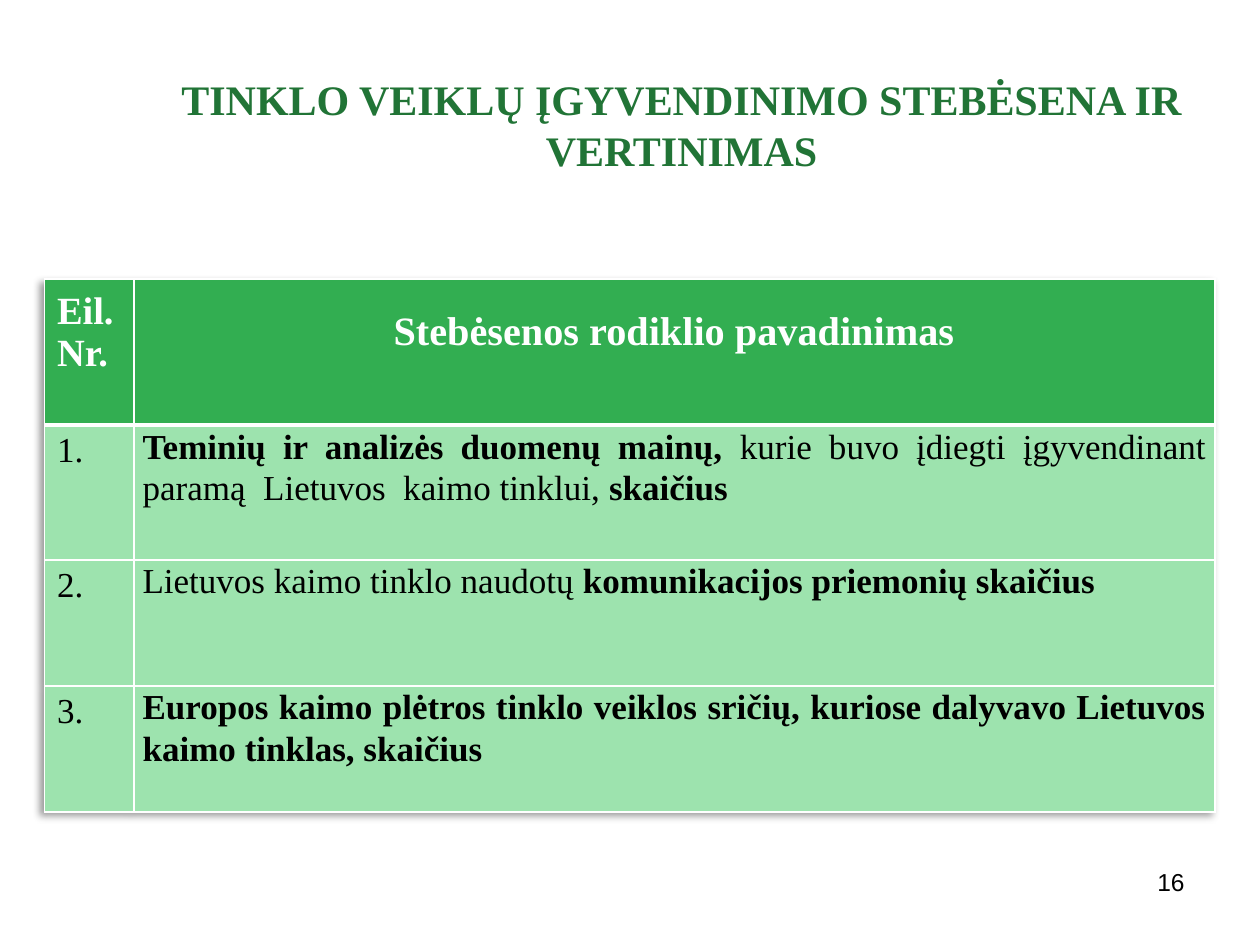
from lxml import etree
from pptx import Presentation
from pptx.dml.color import RGBColor
from pptx.enum.text import MSO_ANCHOR, PP_ALIGN
from pptx.oxml.ns import qn
from pptx.util import Pt

LEFT, MID, RIGHT, JUST = PP_ALIGN.LEFT, PP_ALIGN.CENTER, PP_ALIGN.RIGHT, PP_ALIGN.JUSTIFY
TOP, CENTER = MSO_ANCHOR.TOP, MSO_ANCHOR.MIDDLE
SERIF, SANS = "Times New Roman", "Arial"
HUES = {"title": "217436", "head": "32AE51", "row": "9DE3AE",
        "white": "FFFFFF", "black": "000000"}

TITLE = "TINKLO VEIKLŲ ĮGYVENDINIMO STEBĖSENA IR VERTINIMAS"
HEADS = [("Eil. Nr.", 22, LEFT), ("Stebėsenos rodiklio pavadinimas", 23, MID)]
ROWS = [
    [("Teminių ir analizės duomenų mainų, ", True),
     ("kurie buvo įdiegti įgyvendinant paramą  Lietuvos  kaimo tinklui, ", False),
     ("skaičius", True)],
    [("Lietuvos kaimo tinklo naudotų ", False),
     ("komunikacijos priemonių skaičius", True)],
    [("Europos kaimo plėtros tinklo veiklos sričių, kuriose dalyvavo "
      "Lietuvos kaimo tinklas, skaičius", True)],
]
PAGE = "16"
WIDTHS = [51.1, 617.8]
HEIGHTS = [83.5, 77, 72, 72]


def write(frame, text, size=20, color="black", font=SERIF, bold=False,
          align=LEFT, space=None):
    frame.word_wrap = True
    para = frame.paragraphs[0]
    para.alignment = align
    if space:
        para.line_spacing = space
    runs = [(text, bold)] if isinstance(text, str) else text
    for words, heavy in runs:
        run = para.add_run()
        run.text = words
        run.font.size = Pt(size)
        run.font.name = font
        run.font.bold = heavy
        run.font.color.rgb = RGBColor.from_string(HUES[color])


def add_box(slide, area, text, anchor=TOP, **style):
    frame = slide.shapes.add_textbox(*map(Pt, area)).text_frame
    frame.vertical_anchor = anchor
    write(frame, text, **style)


def add_hue(node, color):
    return etree.SubElement(node, qn("a:srgbClr"), val=HUES[color])


def paint(cell, color, base):
    props = cell._tc.get_or_add_tcPr()
    for side, width in zip("LRTB", (1, 1, 1, base)):
        line = etree.SubElement(props, qn("a:ln" + side), w=str(Pt(width)))
        add_hue(etree.SubElement(line, qn("a:solidFill")), "white")
    cell.fill.solid()
    cell.fill.fore_color.rgb = RGBColor.from_string(HUES[color])


def add_shade(table):
    effects = etree.Element(qn("a:effectLst"))
    shade = etree.SubElement(effects, qn("a:outerShdw"), blurRad=str(Pt(4)),
                             dist=str(Pt(3)), dir="8100000", rotWithShape="0")
    etree.SubElement(add_hue(shade, "black"), qn("a:alpha"), val="40000")
    table._tbl.tblPr.insert(0, effects)


def add_grid(slide):
    table = slide.shapes.add_table(len(HEIGHTS), len(WIDTHS), Pt(25.4), Pt(159.4),
                                   Pt(sum(WIDTHS)), Pt(sum(HEIGHTS))).table
    add_shade(table)
    for col, width in zip(table.columns, WIDTHS):
        col.width = Pt(width)
    for row, height in zip(table.rows, HEIGHTS):
        row.height = Pt(height)
    for col, (text, size, align) in enumerate(HEADS):
        cell = table.cell(0, col)
        paint(cell, "head", 3)
        cell.vertical_anchor = CENTER
        cell.margin_bottom = Pt(26)
        write(cell.text_frame, text, size=size, color="white", bold=True, align=align)
    for row, runs in enumerate(ROWS, 1):
        mark, body = table.cell(row, 0), table.cell(row, 1)
        paint(mark, "row", 1)
        paint(body, "row", 1)
        write(mark.text_frame, f"{row}.")
        body.margin_left = body.margin_right = Pt(5)
        body.margin_top = body.margin_bottom = 0
        write(body.text_frame, runs, align=JUST, space=1.07)


def main():
    deck = Presentation()
    deck.slide_width, deck.slide_height = Pt(720), Pt(540)
    slide = deck.slides.add_slide(deck.slide_layouts[6])
    add_box(slide, (65.5, 26, 648, 90), TITLE, anchor=CENTER, size=24,
            color="title", bold=True, align=MID)
    add_grid(slide)
    add_box(slide, (516, 492, 168, 37.5), PAGE, size=14, font=SANS, align=RIGHT)
    deck.save("out.pptx")


if __name__ == "__main__":
    main()
